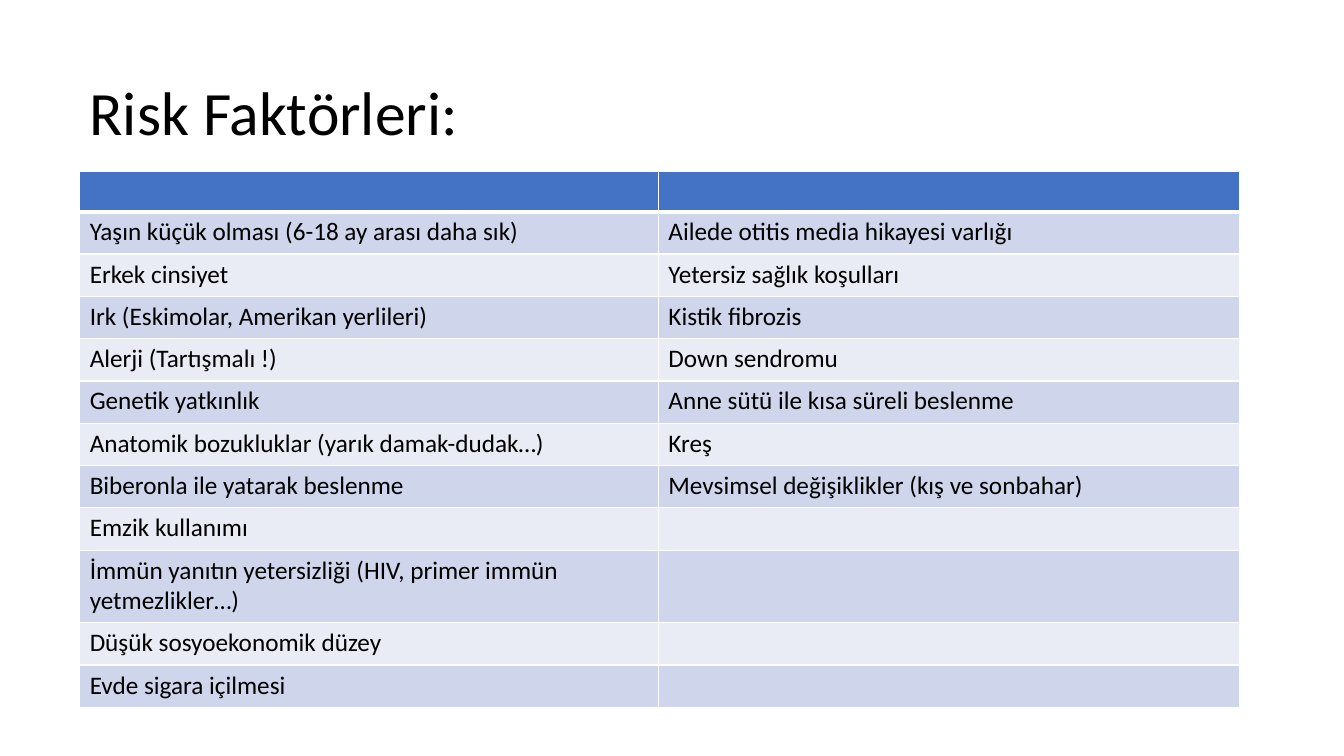
import pptx
import pptx.dml.color
import pptx.enum.text
import pptx.oxml
import pptx.oxml.ns
import pptx.util
from dataclasses import dataclass

Inches = pptx.util.Inches


@dataclass(frozen=True)
class Theme:
    font: str = "Calibri"
    ink: str = "000000"
    header: str = "4472C4"
    bands: tuple = ("CFD5EA", "E9EBF5")
    rule: str = "FFFFFF"
    title_size: int = 44
    body_size: int = 18
    thin: int = 1
    thick: int = 3


class PageBuilder:
    def __init__(self, page, theme):
        self.page = page
        self.theme = theme

    def color(self, value):
        return pptx.dml.color.RGBColor.from_string(value)

    def span(self, para, text, size):
        span = para.add_run()
        span.text = text
        span.font.name = self.theme.font
        span.font.size = pptx.util.Pt(size)
        span.font.color.rgb = self.color(self.theme.ink)

    def title(self, text, left, top, width, height):
        box = self.page.shapes.add_textbox(
            Inches(left), Inches(top), Inches(width), Inches(height))
        frame = box.text_frame
        frame.word_wrap = True
        frame.vertical_anchor = pptx.enum.text.MSO_ANCHOR.MIDDLE
        para = frame.paragraphs[0]
        para.line_spacing = 0.9
        self.span(para, text, self.theme.title_size)

    def borders(self, cell, bottom):
        properties = cell._tc.get_or_add_tcPr()
        widths = {"lnL": self.theme.thin, "lnR": self.theme.thin,
                  "lnT": self.theme.thin, "lnB": bottom}
        for index, (side, width) in enumerate(widths.items()):
            line = pptx.oxml.parse_xml(
                f'<a:{side} {pptx.oxml.ns.nsdecls("a")} w="{pptx.util.Pt(width)}">'
                f'<a:solidFill><a:srgbClr val="{self.theme.rule}"/></a:solidFill>'
                f'</a:{side}>')
            properties.insert(index, line)

    def table(self, rows, left, top, widths, heights):
        frame = self.page.shapes.add_table(
            len(rows), len(widths), Inches(left), Inches(top),
            Inches(sum(widths)), Inches(sum(heights)))
        table = frame.table
        for column, width in zip(table.columns, widths):
            column.width = Inches(width)
        for index, (row, height, texts) in enumerate(zip(table.rows, heights, rows)):
            row.height = Inches(height)
            is_header = index == 0
            fill = self.theme.header if is_header else self.theme.bands[(index - 1) % 2]
            for cell, text in zip(row.cells, texts):
                cell.fill.solid()
                cell.fill.fore_color.rgb = self.color(fill)
                self.borders(cell, self.theme.thick if is_header else self.theme.thin)
                para = cell.text_frame.paragraphs[0]
                if text:
                    self.span(para, text, self.theme.body_size)
                else:
                    para.font.size = pptx.util.Pt(self.theme.body_size)


RISK_FACTORS = [
    ("", ""),
    ("Yaşın küçük olması (6-18 ay arası daha sık)", "Ailede otitis media hikayesi varlığı"),
    ("Erkek cinsiyet", "Yetersiz sağlık koşulları"),
    ("Irk (Eskimolar, Amerikan yerlileri)", "Kistik fibrozis"),
    ("Alerji (Tartışmalı !)", "Down sendromu"),
    ("Genetik yatkınlık", "Anne sütü ile kısa süreli beslenme"),
    ("Anatomik bozukluklar (yarık damak-dudak…)", "Kreş"),
    ("Biberonla ile yatarak beslenme", "Mevsimsel değişiklikler (kış ve sonbahar)"),
    ("Emzik kullanımı", ""),
    ("İmmün yanıtın yetersizliği (HIV, primer immün yetmezlikler…)", ""),
    ("Düşük sosyoekonomik düzey", ""),
    ("Evde sigara içilmesi", ""),
]


def main():
    deck = pptx.Presentation()
    deck.slide_width = Inches(13.33)
    deck.slide_height = Inches(7.5)
    page = deck.slides.add_slide(deck.slide_layouts[6])
    builder = PageBuilder(page, Theme())
    builder.title("Risk Faktörleri:", 0.79, 0.59, 10.29, 1.11)
    heights = [0.4] + [0.42] * 8 + [0.72] + [0.42] * 2
    builder.table(RISK_FACTORS, 0.79, 1.7, [5.74, 5.76], heights)
    deck.save("out.pptx")


if __name__ == "__main__":
    main()
